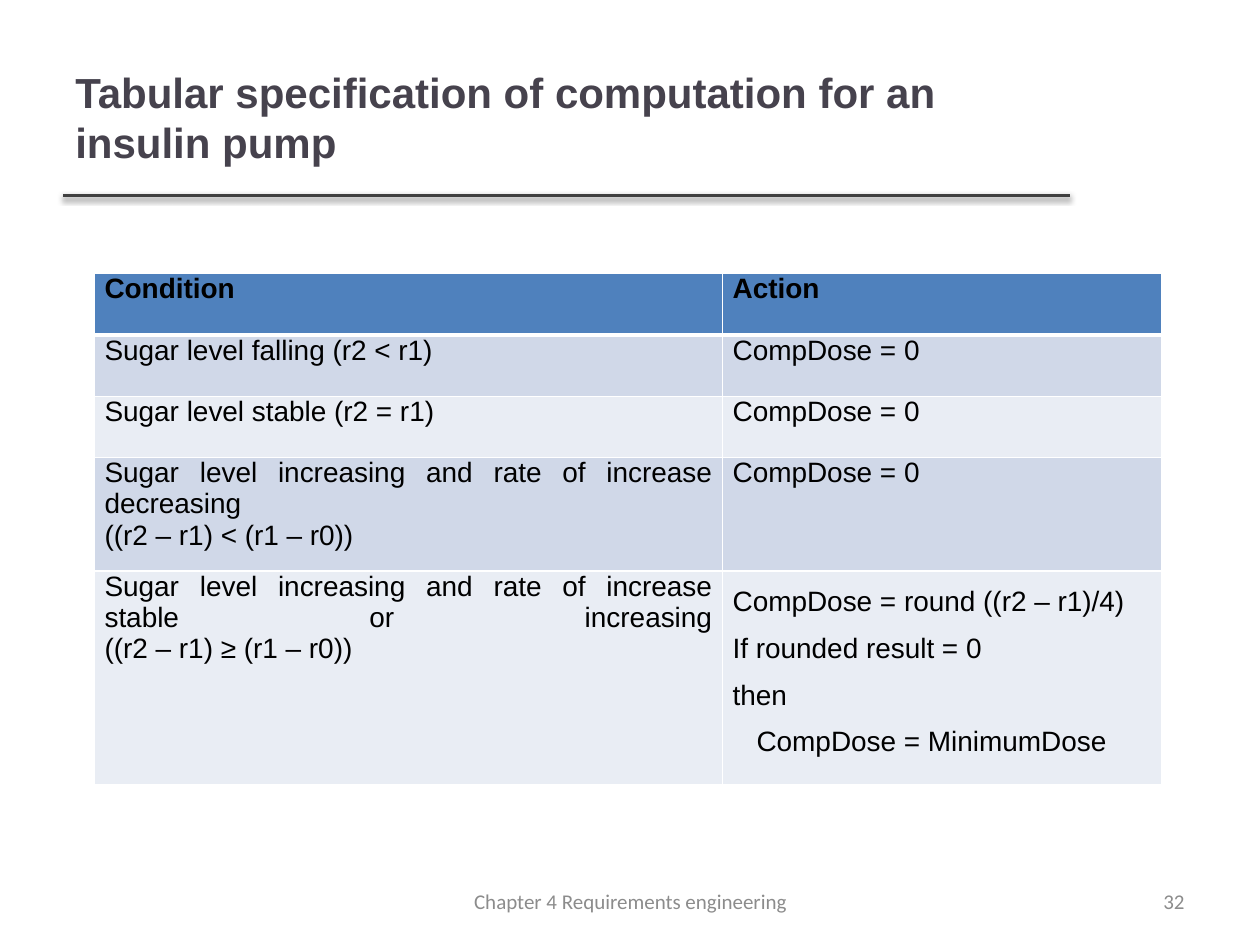
from dataclasses import dataclass

from lxml.etree import SubElement
from pptx import Presentation
from pptx.dml.color import RGBColor
from pptx.enum.shapes import MSO_CONNECTOR as Connector
from pptx.enum.text import MSO_ANCHOR as Anchor, PP_ALIGN as Align
from pptx.oxml import parse_xml
from pptx.oxml.ns import nsdecls, qn
from pptx.util import Inches, Pt


@dataclass(frozen=True)
class Theme:
    heading: str = "46424D"
    rule: str = "404040"
    ink: str = "000000"
    footer: str = "8C8C8C"
    border: str = "FFFFFF"
    header_fill: str = "4F81BD"
    bands: tuple[str, str] = ("D0D8E8", "E9EDF4")
    body_font: str = "Arial"
    footer_font: str = "Calibri"
    title_size: int = 24
    table_size: int = 16
    footer_size: int = 12


@dataclass(frozen=True)
class Style:
    font: str
    size: int
    color: str
    bold: bool = False


@dataclass(frozen=True)
class Label:
    text: str
    left: float
    top: float
    width: float
    height: float
    style: Style
    align: Align = Align.LEFT


@dataclass(frozen=True)
class Rule:
    condition: str
    action: str


THEME = Theme()
WIDTH, HEIGHT = Inches(10), Inches(7.5)
MARGIN = 0.05
FOOTER_TOP, FOOTER_HEIGHT = 6.95 / 7.5, 0.4 / 7.5
COLUMN_SHARES = (0.5, 0.35)
ROW_SHARES = (0.065, 0.065, 0.065, 0.065, 0.09)

TITLE_STYLE = Style(THEME.body_font, THEME.title_size, THEME.heading, True)
HEADER_STYLE = Style(THEME.body_font, THEME.table_size, THEME.ink, True)
CELL_STYLE = Style(THEME.body_font, THEME.table_size, THEME.ink)
FOOTER_STYLE = Style(THEME.footer_font, THEME.footer_size, THEME.footer)

LABELS = (
    Label("Tabular specification of computation for an insulin pump",
          MARGIN, 0.04, 0.8, 1.25 / 7.5, TITLE_STYLE),
    Label("32", 0.717, FOOTER_TOP, 0.233, FOOTER_HEIGHT, FOOTER_STYLE, Align.RIGHT),
    Label("Chapter 4 Requirements engineering",
          0.342, FOOTER_TOP, 0.317, FOOTER_HEIGHT, FOOTER_STYLE, Align.CENTER),
)
RULES = (
    Rule("Condition", "Action"),
    Rule("Sugar level falling (r2 < r1)", "CompDose = 0"),
    Rule("Sugar level stable (r2 = r1)", "CompDose = 0"),
    Rule("Sugar level increasing and rate of increase decreasing\v"
         "((r2 – r1) < (r1 – r0))", "CompDose = 0"),
    Rule("Sugar level increasing and rate of increase stable or increasing\v"
         "((r2 – r1) ≥ (r1 – r0))",
         "CompDose = round ((r2 – r1)/4)\nIf rounded result = 0\nthen\n"
         "CompDose = MinimumDose"),
)


def across(share: float) -> int:
    return round(WIDTH * share)


def down(share: float) -> int:
    return round(HEIGHT * share)


def format_text(frame, style: Style, align: Align) -> None:
    for paragraph in frame.paragraphs:
        paragraph.alignment = align
        for run in paragraph.runs:
            run.font.name = style.font
            run.font.size = Pt(style.size)
            run.font.bold = style.bold
            run.font.color.rgb = RGBColor.from_string(style.color)


def add_label(slide, label: Label) -> None:
    box = slide.shapes.add_textbox(across(label.left), down(label.top),
                                   across(label.width), down(label.height))
    frame = box.text_frame
    frame.word_wrap = True
    frame.vertical_anchor = Anchor.MIDDLE
    frame.text = label.text
    format_text(frame, label.style, label.align)


def add_title_rule(slide) -> None:
    y = down(1.55 / 7.5)
    line = slide.shapes.add_connector(Connector.STRAIGHT, across(MARGIN), y,
                                      across(0.849), y)
    line.line.color.rgb = RGBColor.from_string(THEME.rule)
    line.line.width = Pt(2)
    effects = SubElement(line._element.spPr, qn("a:effectLst"))
    shadow = SubElement(effects, qn("a:outerShdw"), blurRad=str(Pt(3.1)),
                        dist=str(Pt(1.6)), dir="5400000", rotWithShape="0")
    color = SubElement(shadow, qn("a:srgbClr"), val=THEME.ink)
    SubElement(color, qn("a:alpha"), val="38000")


def set_borders(cell, top: float, bottom: float) -> None:
    properties = cell._tc.get_or_add_tcPr()
    widths = {"lnL": 1, "lnR": 1, "lnT": top, "lnB": bottom}
    for position, (side, width) in enumerate(widths.items()):
        properties.insert(position, parse_xml(
            f'<a:{side} {nsdecls("a")} w="{Pt(width)}"><a:solidFill>'
            f'<a:srgbClr val="{THEME.border}"/></a:solidFill></a:{side}>'))


def fill_cell(cell, text: str, row: int) -> None:
    cell.margin_left = cell.margin_right = Inches(0.08)
    cell.margin_top, cell.margin_bottom = 0, Inches(0.1)
    cell.fill.solid()
    fill = THEME.bands[(row - 1) % 2] if row else THEME.header_fill
    cell.fill.fore_color.rgb = RGBColor.from_string(fill)
    set_borders(cell, 3 if row == 1 else 1, 3 if row == 0 else 1)
    cell.text_frame.text = text
    steps = "\n" in text
    format_text(cell.text_frame, CELL_STYLE if row else HEADER_STYLE,
                Align.LEFT if steps else Align.JUSTIFY)
    if steps:
        for paragraph in cell.text_frame.paragraphs:
            paragraph.line_spacing = 1.5
        paragraph._p.get_or_add_pPr().set("marL", str(Inches(0.19)))


def add_rules_table(slide) -> None:
    frame = slide.shapes.add_table(
        len(RULES), len(COLUMN_SHARES), across(0.075), down(2.17 / 7.5),
        across(sum(COLUMN_SHARES)), down(sum(ROW_SHARES)))
    table = frame.table
    for column, share in zip(table.columns, COLUMN_SHARES):
        column.width = across(share - 0.0015)
    for row, share in zip(table.rows, ROW_SHARES):
        row.height = down(share)
    for row, rule in enumerate(RULES):
        for column, text in enumerate((rule.condition, rule.action)):
            fill_cell(table.cell(row, column), text, row)


def main() -> None:
    deck = Presentation()
    deck.slide_width, deck.slide_height = WIDTH, HEIGHT
    slide = deck.slides.add_slide(deck.slide_layouts[6])
    add_title_rule(slide)
    for label in LABELS:
        add_label(slide, label)
    add_rules_table(slide)
    deck.save("out.pptx")


if __name__ == "__main__":
    main()
